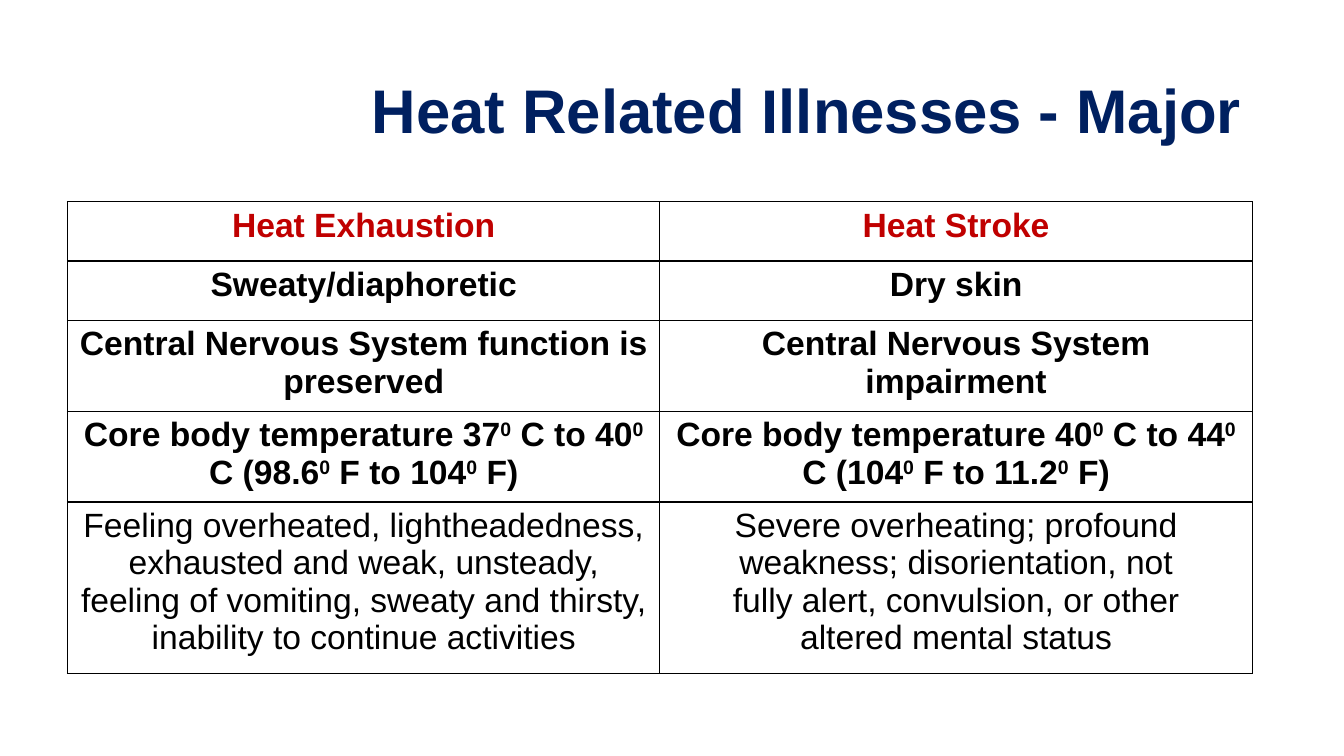
from dataclasses import dataclass

from lxml import etree
from pptx import Presentation
from pptx.dml.color import RGBColor
from pptx.enum import text as t
from pptx.oxml import ns
from pptx.util import Inches, Pt


@dataclass(frozen=True)
class Theme:
    font: str = "Arial"
    navy: str = "002060"
    red: str = "C00000"
    black: str = "000000"
    title_size: int = 44
    body_size: int = 24
    border_width: int = 1


THEME = Theme()

# Text between ^ marks is superscript; \n separates paragraphs
COMPARISON = [
    ("Heat Exhaustion", "Heat Stroke"),
    ("Sweaty/diaphoretic", "Dry skin"),
    ("Central Nervous System function is preserved",
     "Central Nervous System impairment"),
    ("Core body temperature 37^0^ C to 40^0^ C (98.6^0^ F to 104^0^ F)",
     "Core body temperature 40^0^ C to 44^0^ C (104^0^ F to 11.2^0^ F)"),
    ("Feeling overheated, lightheadedness,\nexhausted and weak, unsteady, "
     "feeling of vomiting, sweaty and thirsty, inability to continue activities",
     "Severe overheating; profound weakness; disorientation, not\n"
     "fully alert, convulsion, or other\naltered mental status"),
]


def style_run(run, size, color, bold):
    run.font.name = THEME.font
    run.font.size = Pt(size)
    run.font.bold = bold
    run.font.color.rgb = RGBColor.from_string(color)


def add_title(slide, title):
    box = slide.shapes.add_textbox(Inches(0.92), Inches(0.4), Inches(11.5), Inches(1.45))
    frame = box.text_frame
    frame.word_wrap = True
    frame.vertical_anchor = t.MSO_ANCHOR.MIDDLE
    frame.text = title
    heading = frame.paragraphs[0]
    heading.alignment = t.PP_ALIGN.RIGHT
    heading.line_spacing = 0.9
    style_run(heading.runs[0], THEME.title_size, THEME.navy, True)


def set_borders(cell):
    properties = cell._tc.get_or_add_tcPr()
    for position, side in enumerate(("lnL", "lnR", "lnT", "lnB")):
        line = etree.Element(ns.qn(f"a:{side}"), w=str(Pt(THEME.border_width)))
        fill = etree.SubElement(line, ns.qn("a:solidFill"))
        etree.SubElement(fill, ns.qn("a:srgbClr"), val=THEME.black)
        properties.insert(position, line)


def fill_cell(cell, content, color, bold):
    cell.fill.background()
    set_borders(cell)
    lines = content.split("\n")
    cell.text_frame.text = "\n".join(line.split("^")[0] for line in lines)
    for paragraph, line in zip(cell.text_frame.paragraphs, lines):
        paragraph.alignment = t.PP_ALIGN.CENTER
        for part in line.split("^")[1:]:
            paragraph.add_run().text = part
        for index, run in enumerate(paragraph.runs):
            style_run(run, THEME.body_size, color, bold)
            if index % 2:
                run.font._element.set("baseline", "30000")


def add_comparison(slide, rows):
    row_height = 0.59
    table = slide.shapes.add_table(
        len(rows), len(rows[0]), Inches(0.67), Inches(2),
        Inches(11.75), Inches(row_height * len(rows))).table
    table.first_row = False
    table.horz_banding = False
    for row_index, row in enumerate(rows):
        color = THEME.red if row_index == 0 else THEME.black
        bold = row_index < len(rows) - 1
        for column_index, content in enumerate(row):
            fill_cell(table.cell(row_index, column_index), content, color, bold)


def main():
    prs = Presentation()
    prs.slide_width = Inches(13.33)
    prs.slide_height = Inches(7.5)
    slide = prs.slides.add_slide(prs.slide_layouts[6])

    # Heading
    add_title(slide, "Heat Related Illnesses - Major")

    # Side-by-side signs and symptoms
    add_comparison(slide, COMPARISON)

    prs.save("out.pptx")


if __name__ == "__main__":
    main()
